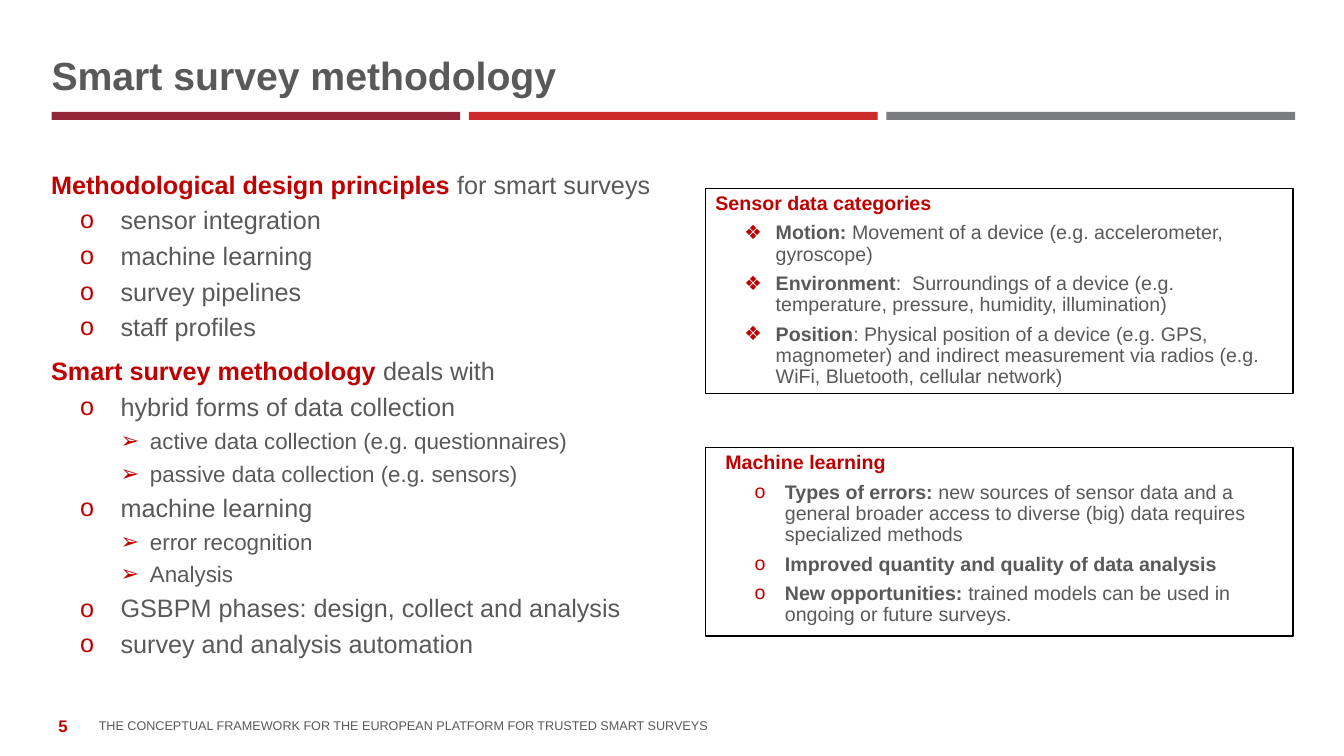
import lxml.etree
import pptx
import pptx.dml.color
import pptx.enum.shapes
import pptx.enum.text
import pptx.oxml.ns
import pptx.util

Cm, Pt = pptx.util.Cm, pptx.util.Pt
qn = pptx.oxml.ns.qn
ANCHOR = pptx.enum.text.MSO_ANCHOR
ALIGN = pptx.enum.text.PP_ALIGN
RECT = pptx.enum.shapes.MSO_SHAPE.RECTANGLE

COLORS = {"wine": "942639", "red": "CC2A2A", "gray": "7B7C7E",
          "text": "595959", "accent": "C00000", "black": "000000"}

# Paragraph kinds: left margin and first-line indent in cm, space before in pt
HEAD = {"level": 0, "left": 0, "first": 0, "before": 12, "size": 18, "mark": None}
ITEM = {"level": 1, "left": 1.75, "first": -1.02, "before": 6, "size": 18, "mark": "o"}
SUB = {"level": 2, "left": 2.49, "first": -0.74, "before": 6, "size": 16, "mark": "➢"}
BOX_HEAD = {**HEAD, "size": 14}
SENSOR = {**ITEM, "left": 1.52, "first": -0.79, "size": 14, "mark": "❖"}
LEARN_HEAD = {**BOX_HEAD, "left": 0.25}
LEARN = {**ITEM, "first": -0.76, "size": 14}

# Each paragraph: kind, bold part, plain part
METHOD = [
    (HEAD, "Methodological design principles ", "for smart surveys"),
    (ITEM, "", "sensor integration"),
    (ITEM, "", "machine learning"),
    (ITEM, "", "survey pipelines"),
    (ITEM, "", "staff profiles"),
    (HEAD, "Smart survey methodology ", "deals with"),
    (ITEM, "", "hybrid forms of data collection"),
    (SUB, "", "active data collection (e.g. questionnaires)"),
    (SUB, "", "passive data collection (e.g. sensors)"),
    (ITEM, "", "machine learning"),
    (SUB, "", "error recognition"),
    (SUB, "", "Analysis"),
    (ITEM, "", "GSBPM phases: design, collect and analysis"),
    (ITEM, "", "survey and analysis automation"),
]
SENSORS = [
    (BOX_HEAD, "Sensor data categories", ""),
    (SENSOR, "Motion: ", "Movement of a device (e.g. accelerometer, gyroscope)"),
    (SENSOR, "Environment", ":  Surroundings of a device (e.g. temperature, "
     "pressure, humidity, illumination)"),
    (SENSOR, "Position", ": Physical position of a device (e.g. GPS, magnometer) "
     "and indirect measurement via radios (e.g. WiFi, Bluetooth, cellular network)"),
]
LEARNING = [
    (LEARN_HEAD, "Machine learning", ""),
    (LEARN, "Types of errors: ", "new sources of sensor data and a general broader "
     "access to diverse (big) data requires specialized methods"),
    (LEARN, "Improved quantity and quality of data analysis", ""),
    (LEARN, "New opportunities: ", "trained models can be used in ongoing or "
     "future surveys."),
]


def rgb(name):
    return pptx.dml.color.RGBColor.from_string(COLORS[name])


def assign(target, values):
    for key, value in values.items():
        setattr(target, key, value)


class Page:
    """Holds the slide and its text style."""

    font = "Arial"

    def __init__(self, slide):
        self.shapes = slide.shapes

    def rect(self, area, fill=None, line=None):
        shape = self.shapes.add_shape(RECT, *map(Cm, area))
        shape.shadow.inherit = False
        if fill:
            shape.fill.solid()
            shape.fill.fore_color.rgb = rgb(fill)
        else:
            shape.fill.background()
        if line:
            shape.line.color.rgb = rgb(line)
            shape.line.width = Pt(1)
        else:
            shape.line.fill.background()
        return shape

    def run(self, para, text, size, color, bold):
        run = para.add_run()
        run.text = text
        assign(run.font, {"name": self.font, "size": Pt(size), "bold": bold})
        run.font.color.rgb = rgb(color)

    def label(self, area, text, size, color="text", bold=False, frame=None, para=None):
        """Add one line of text; frame and para are format values."""
        body = self.shapes.add_textbox(*map(Cm, area)).text_frame
        assign(body, {"word_wrap": True, **(frame or {})})
        first = body.paragraphs[0]
        assign(first, para or {})
        self.run(first, text, size, color, bold)

    def bullet(self, para, mark):
        props = para._p.get_or_add_pPr()
        color = lxml.etree.SubElement(props, qn("a:buClr"))
        lxml.etree.SubElement(color, qn("a:srgbClr"), val=COLORS["accent"])
        lxml.etree.SubElement(props, qn("a:buFont"), typeface=self.font)
        lxml.etree.SubElement(props, qn("a:buChar"), char=mark)

    def outline(self, shape, rows):
        """Fill a shape with headings and bulleted paragraphs."""
        body = shape.text_frame
        assign(body, {"word_wrap": True, "vertical_anchor": ANCHOR.TOP})
        for index, (kind, strong, plain) in enumerate(rows):
            para = body.add_paragraph() if index else body.paragraphs[0]
            assign(para, {"level": kind["level"], "line_spacing": 0.9,
                          "alignment": ALIGN.LEFT,
                          "space_before": Pt(kind["before"] if index else 0)})
            props = para._p.get_or_add_pPr()
            props.set("marL", str(Cm(kind["left"])))
            props.set("indent", str(Cm(kind["first"])))
            if kind["mark"]:
                self.bullet(para, kind["mark"])
            if strong:
                color = "text" if kind["mark"] else "accent"
                self.run(para, strong, kind["size"], color, True)
            if plain:
                self.run(para, plain, kind["size"], "text", False)

    def column(self, area, rows):
        self.outline(self.shapes.add_textbox(*map(Cm, area)), rows)

    def panel(self, area, rows):
        self.outline(self.rect(area, line="black"), rows)


def main():
    deck = pptx.Presentation()
    assign(deck, {"slide_width": Cm(33.87), "slide_height": Cm(19.05)})
    page = Page(deck.slides.add_slide(deck.slide_layouts[6]))

    for index, color in enumerate(("wine", "red", "gray")):
        page.rect((1.3 + index * 10.52, 2.82, 10.3, 0.2), fill=color)

    flush = {"margin_left": 0, "margin_top": 0, "margin_right": 0,
             "margin_bottom": 0, "vertical_anchor": ANCHOR.BOTTOM}
    page.label((1.3, 1.4, 31.29, 1.07), "Smart survey methodology", 28,
               bold=True, frame=flush, para={"line_spacing": Pt(30)})
    page.label((2.49, 17.75, 26.8, 0.71),
               "THE CONCEPTUAL FRAMEWORK FOR THE EUROPEAN PLATFORM "
               "FOR TRUSTED SMART SURVEYS", 9, frame=flush)
    page.label((0.89, 17.78, 1.4, 1.02), "5", 12, "accent", True,
               {"vertical_anchor": ANCHOR.MIDDLE}, {"alignment": ALIGN.CENTER})

    page.column((1.04, 4.22, 18.14, 12.19), METHOD)
    page.panel((17.78, 4.75, 14.81, 5.16), SENSORS)
    page.panel((17.78, 11.28, 14.81, 4.75), LEARNING)
    deck.save("out.pptx")


if __name__ == "__main__":
    main()
